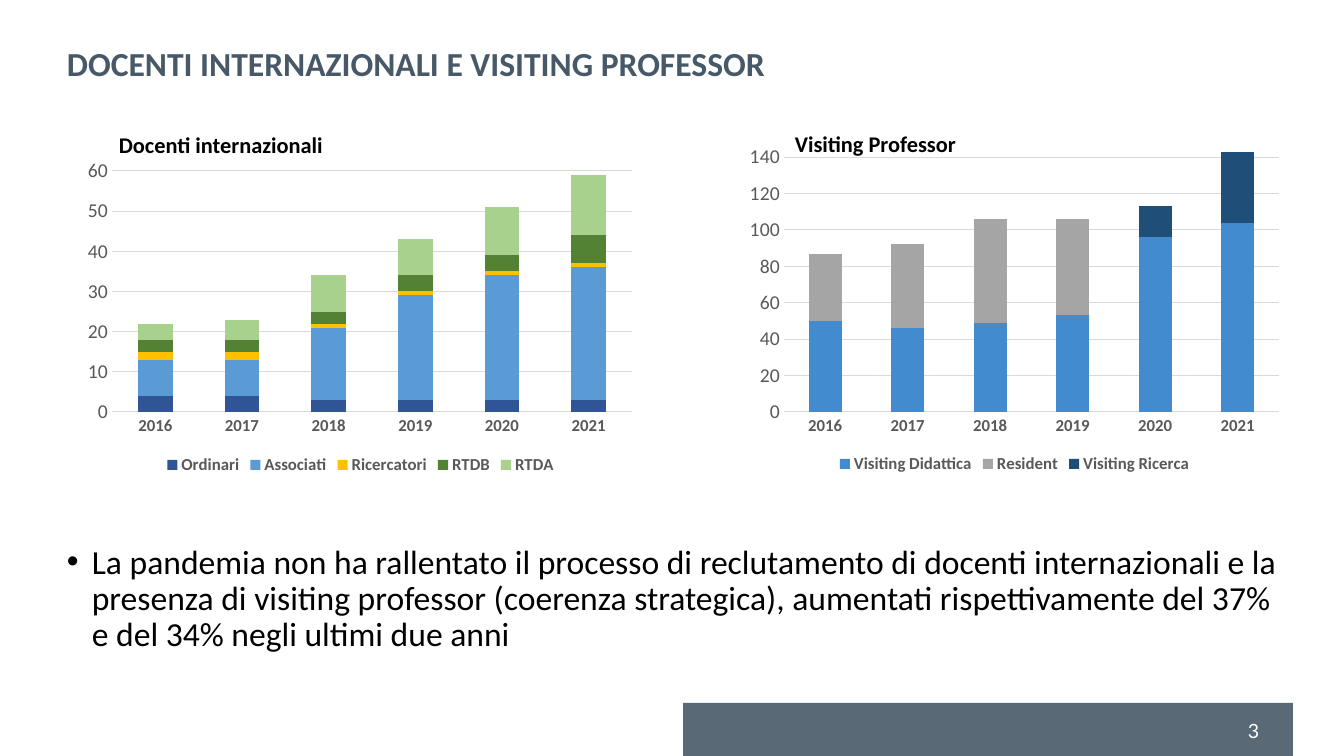
from dataclasses import dataclass
from typing import Optional

import pptx
import pptx.chart.data
import pptx.dml.color
import pptx.enum.chart
import pptx.enum.shapes
import pptx.enum.text
import pptx.oxml
import pptx.oxml.ns
import pptx.util
from lxml import etree

RGBColor = pptx.dml.color.RGBColor
qn = pptx.oxml.ns.qn

EMU_PER_PX = 914400 / 100.8

SLATE = RGBColor(0x47, 0x59, 0x68)
WHITE = RGBColor(0xFF, 0xFF, 0xFF)
BLACK = RGBColor(0x00, 0x00, 0x00)
AXIS_TEXT = RGBColor(0x59, 0x59, 0x59)
GRID = RGBColor(0xD9, 0xD9, 0xD9)
NAVY = RGBColor(0x2F, 0x55, 0x97)
SKY = RGBColor(0x5B, 0x9B, 0xD5)
AMBER = RGBColor(0xFF, 0xC0, 0x00)
GREEN = RGBColor(0x54, 0x82, 0x35)
LIGHT_GREEN = RGBColor(0xA9, 0xD1, 0x8E)
AZURE = RGBColor(0x42, 0x8B, 0xCE)
GREY = RGBColor(0xA5, 0xA5, 0xA5)
DEEP_BLUE = RGBColor(0x1F, 0x4E, 0x79)

YEARS = ["2016", "2017", "2018", "2019", "2020", "2021"]


@dataclass(frozen=True)
class Box:
    left: int
    top: int
    width: int
    height: int

    def emu(self) -> tuple[int, ...]:
        return tuple(px(n) for n in (self.left, self.top, self.width, self.height))


@dataclass(frozen=True)
class Caption:
    text: str
    box: Box
    size: int
    color: RGBColor = BLACK
    bold: bool = False
    font: str = "Calibri"
    line_spacing: Optional[float] = None
    middle: bool = False
    bullet: bool = False


@dataclass(frozen=True)
class Series:
    name: str
    values: tuple[int, ...]
    color: RGBColor


@dataclass(frozen=True)
class StackedChart:
    box: Box
    plot: Box
    maximum: int
    step: int
    series: tuple[Series, ...]


CAPTIONS = [
    Caption("DOCENTI INTERNAZIONALI E VISITING PROFESSOR", Box(57, 43, 1235, 46), 24,
            SLATE, bold=True, line_spacing=0.9, middle=True),
    Caption("Docenti internazionali", Box(109, 126, 439, 37), 16, bold=True),
    Caption("Visiting Professor", Box(785, 125, 295, 37), 16, bold=True),
    Caption("La pandemia non ha rallentato il processo di reclutamento di docenti "
            "internazionali e la presenza di visiting professor (coerenza strategica), "
            "aumentati rispettivamente del 37% e del 34% negli ultimi due anni",
            Box(57, 540, 1235, 141), 24, line_spacing=0.9, bullet=True),
    Caption("3", Box(1238, 714, 55, 34), 14, WHITE, font="Lato"),
]

CHARTS = [
    StackedChart(Box(739, 132, 551, 346), Box(784, 139, 495, 273), 150, 20, (
        Series("Visiting Didattica", (50, 46, 49, 53, 96, 104), AZURE),
        Series("Resident", (37, 46, 57, 53, 0, 0), GREY),
        Series("Visiting Ricerca", (0, 0, 0, 0, 17, 39), DEEP_BLUE),
    )),
    StackedChart(Box(77, 153, 567, 326), Box(112, 171, 520, 241), 60, 10, (
        Series("Ordinari", (4, 4, 3, 3, 3, 3), NAVY),
        Series("Associati", (9, 9, 18, 26, 31, 33), SKY),
        Series("Ricercatori", (2, 2, 1, 1, 1, 1), AMBER),
        Series("RTDB", (3, 3, 3, 4, 4, 7), GREEN),
        Series("RTDA", (4, 5, 9, 9, 12, 15), LIGHT_GREEN),
    )),
]


def px(length: int) -> int:
    return round(length * EMU_PER_PX)


def style_font(font, size: int, color: RGBColor, bold: bool = False,
               name: str = "Calibri") -> None:
    font.name = name
    font.size = pptx.util.Pt(size)
    font.bold = bold
    font.color.rgb = color


def style_line(line) -> None:
    line.color.rgb = GRID
    line.width = pptx.util.Pt(0.75)


def add_footer_band(slide, box: Box) -> None:
    band = slide.shapes.add_shape(pptx.enum.shapes.MSO_SHAPE.RECTANGLE, *box.emu())
    band.shadow.inherit = False
    band.fill.solid()
    band.fill.fore_color.rgb = SLATE
    band.line.fill.background()
    color = band.fill._xPr.find(".//" + qn("a:srgbClr"))
    etree.SubElement(color, qn("a:alpha"), val="90000")


def add_caption(slide, caption: Caption) -> None:
    frame = slide.shapes.add_textbox(*caption.box.emu()).text_frame
    frame.word_wrap = True
    if caption.middle:
        frame.vertical_anchor = pptx.enum.text.MSO_ANCHOR.MIDDLE
    frame.text = caption.text
    paragraph = frame.paragraphs[0]
    if caption.bullet:
        properties = paragraph._p.get_or_add_pPr()
        properties.set("marL", str(px(25)))
        properties.set("indent", str(-px(25)))
        etree.SubElement(properties, qn("a:buFont"), typeface="Arial")
        etree.SubElement(properties, qn("a:buChar"), char="•")
    if caption.line_spacing:
        paragraph.line_spacing = caption.line_spacing
    style_font(paragraph.runs[0].font, caption.size, caption.color, caption.bold, caption.font)


def place_plot(chart, box: Box, plot: Box) -> None:
    plot_area = chart._chartSpace.chart.plotArea
    for automatic in plot_area.findall(qn("c:layout")):
        plot_area.remove(automatic)
    layout = etree.Element(qn("c:layout"))
    manual = etree.SubElement(layout, qn("c:manualLayout"))
    settings = {
        "layoutTarget": "inner",
        "xMode": "edge",
        "yMode": "edge",
        "x": (plot.left - box.left) / box.width,
        "y": (plot.top - box.top) / box.height,
        "w": plot.width / box.width,
        "h": plot.height / box.height,
    }
    for tag, value in settings.items():
        etree.SubElement(manual, qn(f"c:{tag}"), val=str(value))
    plot_area.insert(0, layout)


def add_stacked_chart(slide, spec: StackedChart) -> None:
    data = pptx.chart.data.CategoryChartData()
    data.categories = YEARS
    for series in spec.series:
        data.add_series(series.name, series.values)
    kind = pptx.enum.chart.XL_CHART_TYPE.COLUMN_STACKED
    chart = slide.shapes.add_chart(kind, *spec.box.emu(), data).chart
    chart.has_title = False
    style_font(chart.font, 12, BLACK)

    columns = chart.plots[0]
    columns.gap_width = 150
    columns.overlap = 100
    columns.vary_by_categories = False
    for drawn, series in zip(columns.series, spec.series):
        drawn.format.fill.solid()
        drawn.format.fill.fore_color.rgb = series.color

    years, counts = chart.category_axis, chart.value_axis
    for axis in (years, counts):
        axis.major_tick_mark = pptx.enum.chart.XL_TICK_MARK.NONE
        axis.minor_tick_mark = pptx.enum.chart.XL_TICK_MARK.NONE
    style_font(years.tick_labels.font, 12, AXIS_TEXT, bold=True)
    style_line(years.format.line)
    style_font(counts.tick_labels.font, 14, AXIS_TEXT)
    counts.format.line.fill.background()
    counts.minimum_scale = 0
    counts.maximum_scale = spec.maximum
    counts.major_unit = spec.step
    style_line(counts.major_gridlines.format.line)

    chart.has_legend = True
    chart.legend.position = pptx.enum.chart.XL_LEGEND_POSITION.BOTTOM
    chart.legend.include_in_layout = False
    style_font(chart.legend.font, 12, AXIS_TEXT, bold=True)
    place_plot(chart, spec.box, spec.plot)


def main() -> None:
    deck = pptx.Presentation()
    deck.slide_width, deck.slide_height = px(1344), px(756)
    slide = deck.slides.add_slide(deck.slide_layouts[6])
    add_footer_band(slide, Box(683, 703, 610, 53))
    for spec in CHARTS:
        add_stacked_chart(slide, spec)
    for caption in CAPTIONS:
        add_caption(slide, caption)
    deck.save("out.pptx")


if __name__ == "__main__":
    main()
